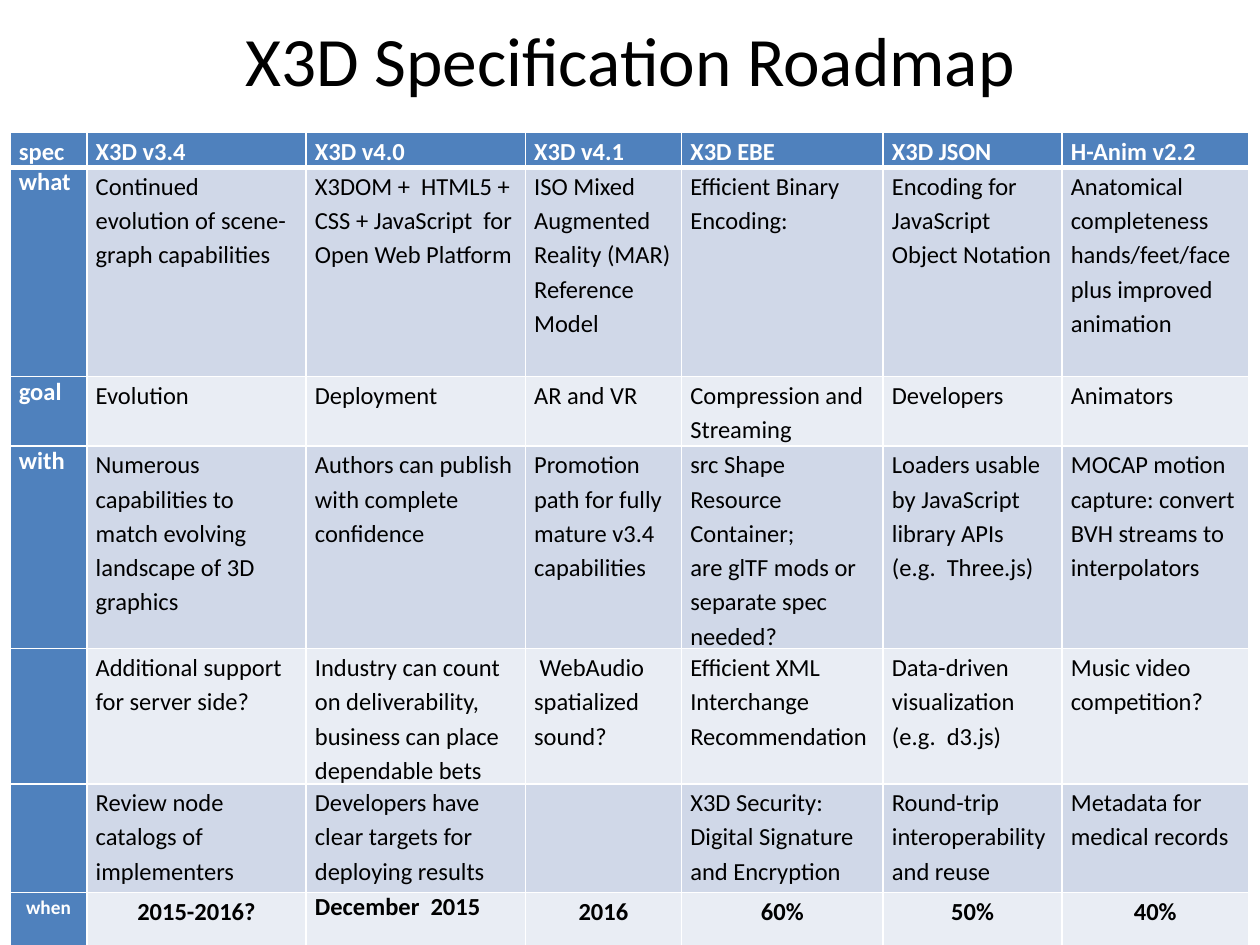
from lxml.etree import SubElement
from pptx import Presentation
from pptx.dml.color import RGBColor
from pptx.enum.text import MSO_ANCHOR, PP_ALIGN
from pptx.oxml.ns import qn
from pptx.util import Inches, Pt

WHITE = RGBColor(0xFF, 0xFF, 0xFF)
BLACK = RGBColor(0x00, 0x00, 0x00)
BLUE = RGBColor(0x4F, 0x81, 0xBD)
BAND_DARK = RGBColor(0xD0, 0xD8, 0xE8)
BAND_LIGHT = RGBColor(0xE9, 0xED, 0xF4)

WIDTH, HEIGHT = Inches(10), Inches(7.5)
COLUMN_WIDTHS = [0.61, 1.74, 1.74, 1.24, 1.6, 1.42, 1.48]
ROW_HEIGHTS = [0.28, 1.66, 0.55, 1.27, 0.92, 0.86, 1.12]

ROADMAP = [
    ["spec", "X3D v3.4", "X3D v4.0", "X3D v4.1", "X3D EBE", "X3D JSON", "H-Anim v2.2"],
    ["what",
     "Continued evolution of scene-graph capabilities",
     "X3DOM +  HTML5 + CSS + JavaScript  for Open Web Platform",
     "ISO Mixed Augmented Reality (MAR) Reference Model",
     "Efficient Binary Encoding:",
     "Encoding for JavaScript Object Notation",
     "Anatomical completeness hands/feet/face plus improved animation"],
    ["goal", "Evolution", "Deployment", "AR and VR", "Compression and Streaming",
     "Developers", "Animators"],
    ["with",
     "Numerous capabilities to match evolving landscape of 3D graphics",
     "Authors can publish with complete confidence",
     "Promotion path for fully mature v3.4 capabilities",
     "src Shape Resource Container;\nare glTF mods or separate spec needed?",
     "Loaders usable by JavaScript library APIs (e.g.  Three.js)",
     "MOCAP motion capture: convert BVH streams to interpolators"],
    ["",
     "Additional support for server side?",
     "Industry can count on deliverability, business can place dependable bets",
     " WebAudio spatialized sound?",
     "Efficient XML Interchange Recommendation",
     "Data-driven visualization\n(e.g.  d3.js)",
     "Music video competition?"],
    ["",
     "Review node catalogs of implementers",
     "Developers have clear targets for deploying results",
     "",
     "X3D Security: Digital Signature and Encryption",
     "Round-trip interoperability and reuse",
     "Metadata for medical records"],
    ["when", "2015-2016?", "December  2015", "2016", "60%", "50%", "40%"],
]
LAST_ROW = len(ROADMAP) - 1
DECEMBER_CELL = (LAST_ROW, 2)


def set_values(target, values):
    for name, value in values.items():
        setattr(target, name, value)


def write_text(frame, text, paragraph_format, size, color, bold=False):
    frame.text = text
    for para in frame.paragraphs:
        set_values(para, paragraph_format)
        set_values(para.font, {"size": Pt(size), "name": "Calibri", "bold": bold})
        for span in para.runs:
            set_values(span.font, {"size": Pt(size), "name": "Calibri", "bold": bold})
            span.font.color.rgb = color


def add_title(page, text):
    box = page.shapes.add_textbox(
        int(WIDTH * 0.05), Inches(0.08), int(WIDTH * 0.9), Inches(0.78))
    set_values(box.text_frame, {"word_wrap": True, "vertical_anchor": MSO_ANCHOR.MIDDLE})
    write_text(box.text_frame, text, {"alignment": PP_ALIGN.CENTER}, 39.6, BLACK)


def add_borders(cell, is_header, below_header):
    """Draw white cell borders, thicker under the header row."""
    properties = cell._tc.get_or_add_tcPr()
    thick = {"lnB": is_header, "lnT": below_header}
    for side in ("lnL", "lnR", "lnT", "lnB"):
        points = 3 if thick.get(side) else 1
        line = SubElement(properties, qn(f"a:{side}"), w=str(Pt(points)))
        fill = SubElement(line, qn("a:solidFill"))
        SubElement(fill, qn("a:srgbClr"), val=str(WHITE))


def format_cell(cell, row, column, text):
    is_header, is_label, is_date = row == 0, column == 0, row == LAST_ROW
    is_blue = is_header or is_label
    set_values(cell, {
        "margin_left": Inches(0.07), "margin_right": Inches(0.07),
        "margin_top": 0, "margin_bottom": 0, "vertical_anchor": MSO_ANCHOR.TOP})
    add_borders(cell, is_header, row == 1)
    cell.fill.solid()
    band = BAND_DARK if row % 2 else BAND_LIGHT
    cell.fill.fore_color.rgb = BLUE if is_blue else band

    is_plain = (row, column) == DECEMBER_CELL or (is_label and 0 < row < LAST_ROW)
    paragraph_format = {
        "alignment": PP_ALIGN.CENTER if is_date and not is_plain else PP_ALIGN.LEFT,
        "line_spacing": 1.0 if is_plain else 1.15}
    write_text(cell.text_frame, text, paragraph_format,
               size=11 if is_date and is_label else 14,
               color=WHITE if is_blue else BLACK,
               bold=is_blue or is_date)


def add_roadmap(page):
    frame = page.shapes.add_table(
        len(ROW_HEIGHTS), len(COLUMN_WIDTHS), Inches(0.08), Inches(1.05),
        Inches(sum(COLUMN_WIDTHS)), Inches(sum(ROW_HEIGHTS)))
    table = frame.table
    for column, width in zip(table.columns, COLUMN_WIDTHS):
        column.width = Inches(width)
    for row, height in zip(table.rows, ROW_HEIGHTS):
        row.height = Inches(height)
    for row, texts in enumerate(ROADMAP):
        for column, text in enumerate(texts):
            format_cell(table.cell(row, column), row, column, text)


def main():
    deck = Presentation()
    set_values(deck, {"slide_width": WIDTH, "slide_height": HEIGHT})
    page = deck.slides.add_slide(deck.slide_layouts[6])
    add_title(page, "X3D Specification Roadmap")
    add_roadmap(page)
    deck.save("out.pptx")


if __name__ == "__main__":
    main()
